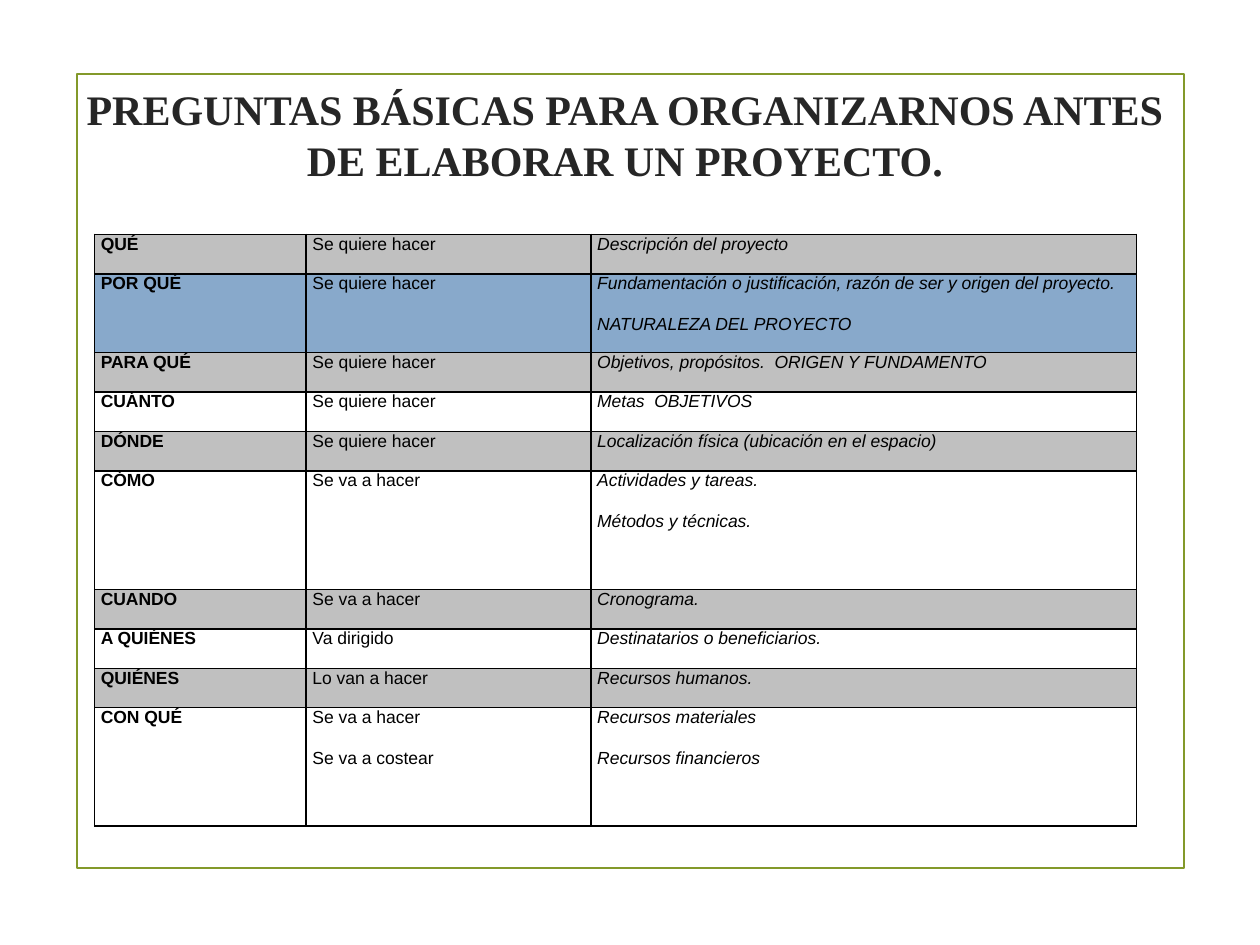
from lxml import etree
from pptx import Presentation
from pptx.dml.color import RGBColor
from pptx.enum.shapes import MSO_SHAPE
from pptx.enum.text import MSO_ANCHOR, MSO_AUTO_SIZE, PP_ALIGN
from pptx.oxml.ns import qn
from pptx.util import Inches, Pt

RECT = MSO_SHAPE.RECTANGLE
MIDDLE = MSO_ANCHOR.MIDDLE
NO_FIT = MSO_AUTO_SIZE.NONE
LEFT, CENTER = PP_ALIGN.LEFT, PP_ALIGN.CENTER

COLORS = {
    "frame": "83992A",
    "title": "262626",
    "text": "000000",
    "border": "000000",
    "gray": "C0C0C0",
    "blue": "88A9CB",
    "white": "FFFFFF",
}

TITLE = "PREGUNTAS BÁSICAS PARA ORGANIZARNOS ANTES DE ELABORAR UN PROYECTO."

COL_WIDTHS = [1.68, 2.26, 4.33]
ROW_UNIT = 4.7 / 15

# Row height in units, fill, question, action, content (one line per paragraph)
ROWS = [
    (1, "gray", "QUÉ", "Se quiere hacer", "Descripción del proyecto"),
    (2, "blue", "POR QUÉ", "Se quiere hacer",
     "Fundamentación o justificación, razón de ser y origen del proyecto.\n"
     "NATURALEZA DEL PROYECTO"),
    (1, "gray", "PARA QUÉ", "Se quiere hacer",
     "Objetivos, propósitos.  ORIGEN Y FUNDAMENTO"),
    (1, "white", "CUÁNTO", "Se quiere hacer", "Metas  OBJETIVOS"),
    (1, "gray", "DÓNDE", "Se quiere hacer",
     "Localización física (ubicación en el espacio)"),
    (3, "white", "CÓMO", "Se va a hacer",
     "Actividades y tareas.\nMétodos y técnicas."),
    (1, "gray", "CUANDO", "Se va a hacer", "Cronograma."),
    (1, "white", "A QUIÉNES", "Va dirigido", "Destinatarios o beneficiarios."),
    (1, "gray", "QUIÉNES", "Lo van a hacer", "Recursos humanos."),
    (3, "white", "CON QUÉ", "Se va a hacer\nSe va a costear",
     "Recursos materiales\nRecursos financieros"),
]


def rgb(name):
    return RGBColor.from_string(COLORS[name])


def write_text(tf, text, font="Arial", size=10, color="text", bold=False,
               italic=False, align=LEFT, before=0, after=0):
    """Write one paragraph per line; only later paragraphs get space before."""
    for i, line in enumerate(text.split("\n")):
        p = tf.add_paragraph() if i else tf.paragraphs[0]
        p.alignment = align
        p.space_before = Pt(before if i else 0)
        p.space_after = Pt(after)
        r = p.add_run()
        r.text = line
        r.font.name = font
        r.font.size = Pt(size)
        r.font.bold = bold
        r.font.italic = italic
        r.font.color.rgb = rgb(color)


def add_borders(cell, color="border", width=1):
    tc_pr = cell._tc.get_or_add_tcPr()
    for side in ("lnL", "lnR", "lnT", "lnB"):
        ln = etree.SubElement(tc_pr, qn(f"a:{side}"), w=str(Pt(width)))
        fill = etree.SubElement(ln, qn("a:solidFill"))
        etree.SubElement(fill, qn("a:srgbClr"), val=COLORS[color])


def add_frame(slide, x, y, w, h):
    s = slide.shapes.add_shape(RECT, Inches(x), Inches(y), Inches(w), Inches(h))
    s.shadow.inherit = False
    s.fill.background()
    s.line.color.rgb = rgb("frame")
    s.line.width = Pt(1.25)


def place_title(slide, x, y, w, h):
    s = slide.shapes.title
    s.left, s.top, s.width, s.height = (Inches(v) for v in (x, y, w, h))
    tf = s.text_frame
    tf.word_wrap = True
    tf.auto_size = NO_FIT
    tf.vertical_anchor = MIDDLE
    write_text(tf, TITLE, font="Times New Roman", size=24, color="title",
               bold=True, align=CENTER)


def add_question_table(slide, x, y, w, h):
    table = slide.shapes.add_table(
        len(ROWS), len(COL_WIDTHS),
        Inches(x), Inches(y), Inches(w), Inches(h)).table
    table.first_row = table.horz_banding = False
    for column, width in zip(table.columns, COL_WIDTHS):
        column.width = Inches(width)
    for row, (units, fill, *texts) in zip(table.rows, ROWS):
        row.height = Inches(units * ROW_UNIT)
        for col, (cell, text) in enumerate(zip(row.cells, texts)):
            cell.margin_left = cell.margin_right = Inches(0.05)
            cell.margin_top = cell.margin_bottom = 0
            add_borders(cell)
            cell.fill.solid()
            cell.fill.fore_color.rgb = rgb(fill)
            write_text(cell.text_frame, text, bold=col == 0, italic=col == 2,
                       before=6, after=6)


def main():
    prs = Presentation()
    prs.slide_width, prs.slide_height = Inches(10), Inches(7.5)
    slide = prs.slides.add_slide(prs.slide_layouts.get_by_name("Title Only"))
    add_frame(slide, 0.61, 0.59, 8.79, 6.3)
    place_title(slide, 0.46, 0.44, 9, 1.25)
    add_question_table(slide, 0.75, 1.86, sum(COL_WIDTHS), 4.7)
    prs.save("out.pptx")


if __name__ == "__main__":
    main()
